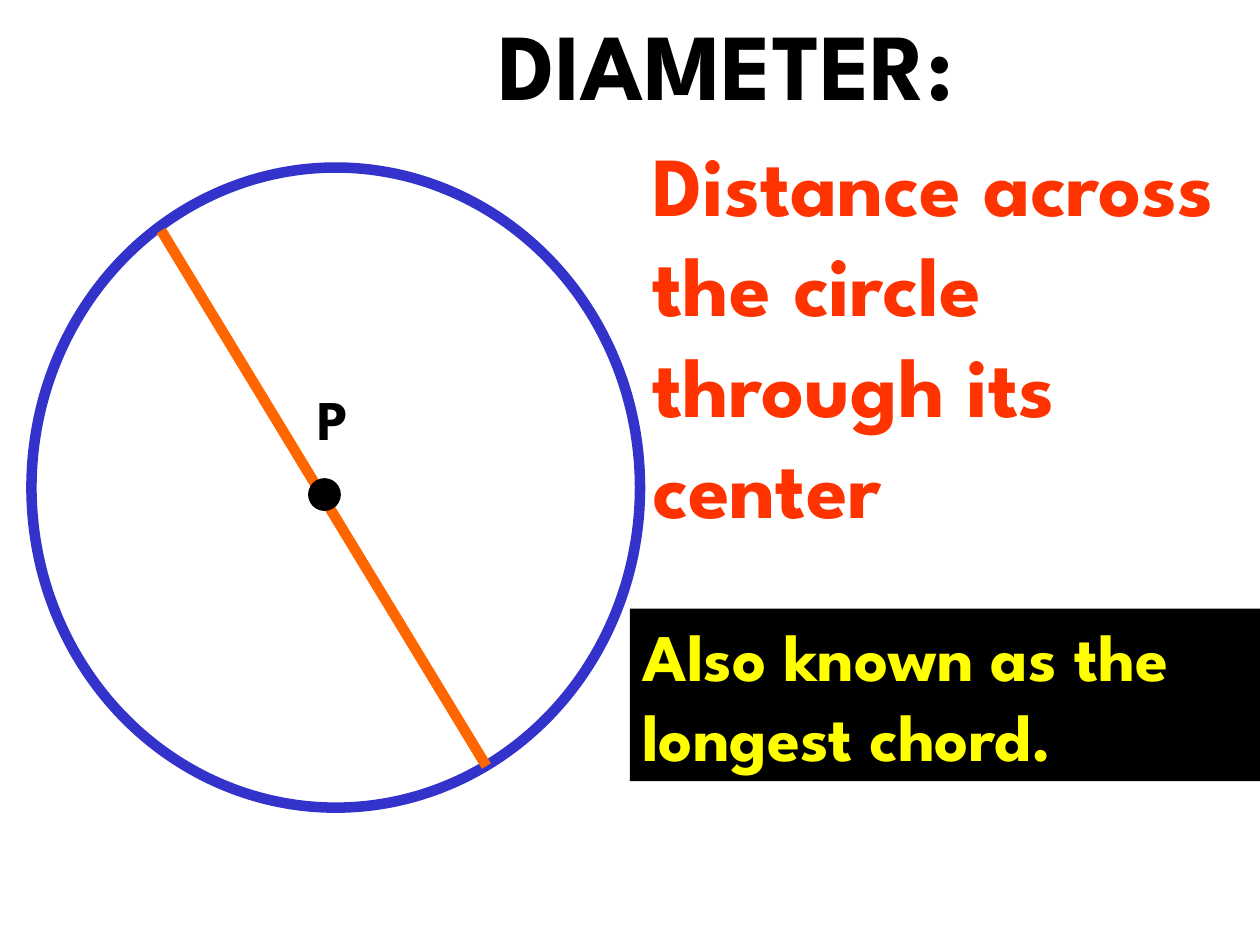
from dataclasses import dataclass

from lxml import etree
from pptx import Presentation
from pptx.dml.color import RGBColor as Rgb
from pptx.enum import shapes, text
from pptx.util import Inches, Pt


@dataclass(frozen=True)
class Theme:
    font: str = "League Spartan"
    black: Rgb = Rgb(0, 0, 0)
    blue: Rgb = Rgb(0x33, 0x33, 0xCC)
    orange: Rgb = Rgb(0xFF, 0x66, 0)
    red: Rgb = Rgb(0xFF, 0x33, 0)
    yellow: Rgb = Rgb(0xFF, 0xFF, 0)
    label: int = 32
    note: int = 38
    body: int = 48
    title: int = 54
    stroke: int = 6
    thin: float = 0.75


theme = Theme()


def write(shape, words, size, color):
    """Fill a shape with one bold, left-aligned run set from the top."""
    frame = shape.text_frame
    frame.word_wrap = True
    frame.auto_size = text.MSO_AUTO_SIZE.SHAPE_TO_FIT_TEXT
    frame.vertical_anchor = text.MSO_ANCHOR.TOP
    para = frame.paragraphs[0]
    para.alignment = text.PP_ALIGN.LEFT
    run = para.add_run()
    run.text = words
    run.font.name = theme.font
    run.font.size = Pt(size)
    run.font.bold = True
    run.font.color.rgb = color


def draw(kind, box, fill=None, line=None, width=0):
    shape = slide.shapes.add_shape(kind, *map(Inches, box))
    shape.shadow.inherit = False
    for part, color in ((shape.fill, fill), (shape.line.fill, line)):
        if color is None:
            part.background()
        else:
            part.solid()
            part.fore_color.rgb = color
    if line is not None:
        shape.line.width = Pt(width)
    return shape


deck = Presentation()
deck.slide_width, deck.slide_height = Inches(10), Inches(7.5)
slide = deck.slides.add_slide(deck.slide_layouts[6])
kinds = shapes.MSO_SHAPE

# Circle
draw(kinds.OVAL, (0.25, 1.33, 4.83, 5.08), line=theme.blue, width=theme.stroke)

# Title, definition and centre label
for words, box, size, color in (
    ("P", (2.42, 3, 0.5, 0.63), theme.label, theme.black),
    ("DIAMETER:", (3.86, 0, 6.14, 1.01), theme.title, theme.black),
    ("Distance across the circle through its center",
     (5.08, 1, 4.92, 3.33), theme.body, theme.red),
):
    write(slide.shapes.add_textbox(*map(Inches, box)), words, size, color)

# Diameter and centre point
chord = slide.shapes.add_connector(
    shapes.MSO_CONNECTOR.STRAIGHT,
    Inches(1.28), Inches(1.83), Inches(3.86), Inches(6.08))
chord.line.color.rgb = theme.orange
chord.line.width = Pt(theme.stroke)
props = chord.line._get_or_add_ln().getparent()
etree.SubElement(
    props, "{http://schemas.openxmlformats.org/drawingml/2006/main}effectLst")
draw(kinds.OVAL, (2.45, 3.8, 0.25, 0.25), theme.black, theme.black, theme.thin)

# Note
note = draw(kinds.RECTANGLE, (5, 4.83, 5, 1.37), theme.black)
write(note, "Also known as the longest chord.", theme.note, theme.yellow)

deck.save("out.pptx")
